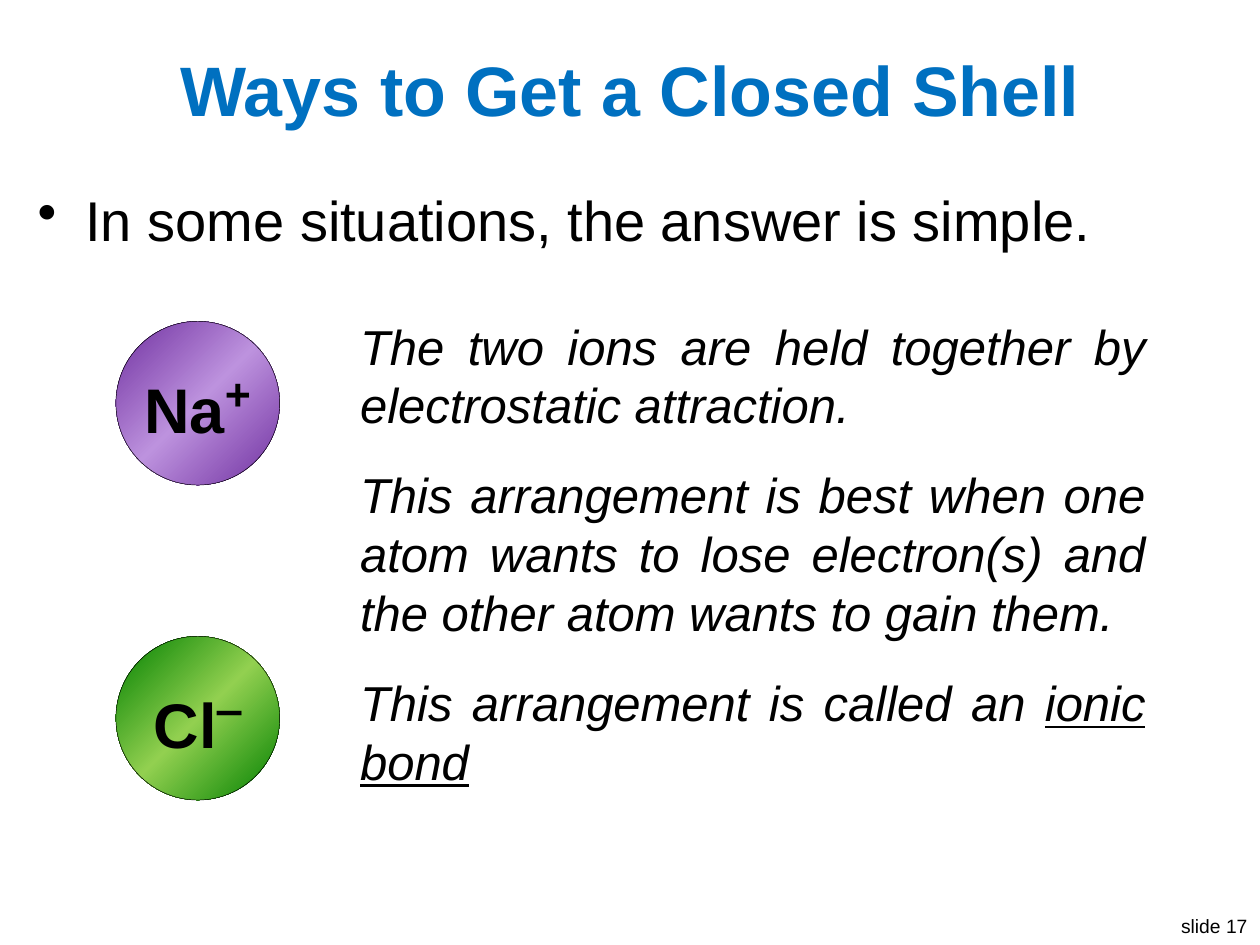
import copy
from dataclasses import dataclass

import pptx
import pptx.dml.color
import pptx.enum.shapes
import pptx.enum.text
import pptx.oxml
import pptx.oxml.ns
import pptx.util

Inches = pptx.util.Inches
Pt = pptx.util.Pt
Align = pptx.enum.text.PP_ALIGN
Anchor = pptx.enum.text.MSO_ANCHOR
qn = pptx.oxml.ns.qn


@dataclass(frozen=True)
class Theme:
    font: str = "Arial"
    ink: str = "000000"
    heading: str = "0070C0"
    sodium: tuple = ("7030A0", "BD92DE")
    chlorine: tuple = ("008000", "92D050")
    title_size: int = 40
    bullet_size: int = 32
    note_size: int = 28
    ion_size: int = 36
    charge_size: int = 44
    footer_size: int = 11


THEME = Theme()


def rgb(value):
    return pptx.dml.color.RGBColor.from_string(value)


def add_run(paragraph, text, size, color=THEME.ink, bold=False, italic=False, underline=False):
    run = paragraph.add_run()
    run.text = text
    font = run.font
    font.name, font.size = THEME.font, Pt(size)
    font.bold, font.italic, font.underline = bold, italic, underline
    font.color.rgb = rgb(color)
    return run


def place(shape, left, top, width, height):
    shape.left, shape.top = Inches(left), Inches(top)
    shape.width, shape.height = Inches(width), Inches(height)


def add_title(slide, text):
    title = slide.shapes.title
    place(title, 0.2, 0.3, 9.6, 0.8)
    title.text_frame.vertical_anchor = Anchor.MIDDLE
    paragraph = title.text_frame.paragraphs[0]
    paragraph.alignment = Align.CENTER
    add_run(paragraph, text, THEME.title_size, THEME.heading, bold=True)


def add_paragraph_box(slide, left, top, width, height, align, space_before=0, wrap=True):
    box = slide.shapes.add_textbox(Inches(left), Inches(top), Inches(width), Inches(height))
    box.text_frame.word_wrap = wrap
    paragraph = box.text_frame.paragraphs[0]
    paragraph.alignment = align
    paragraph.space_before = Pt(space_before)
    return paragraph


def add_bullet(slide, text):
    paragraph = add_paragraph_box(slide, 0.2, 1.42, 9.6, 0.64, Align.LEFT, 12)
    properties = paragraph._p.get_or_add_pPr()
    indent = Inches(0.38)
    properties.set("marL", str(indent))
    properties.set("indent", str(-indent))
    marker = pptx.oxml.parse_xml(
        f'<a:buChar {pptx.oxml.ns.nsdecls("a")} char="•"/>')
    properties.append(marker)
    add_run(paragraph, text, THEME.bullet_size)


def add_note(slide, top, height, text, term=""):
    paragraph = add_paragraph_box(slide, 2.76, top, 6.43, height, Align.JUSTIFY, 12)
    add_run(paragraph, text, THEME.note_size, italic=True)
    if term:
        add_run(paragraph, term, THEME.note_size, italic=True, underline=True)


def fill_sheen(shape, edge, middle):
    shape.fill.gradient()
    shape.fill.gradient_angle = 315
    stops = shape.fill.gradient_stops
    for stop, position in zip(stops, (0, 1)):
        stop.color.rgb = rgb(edge)
        stop.position = position
    stop_list = shape._element.spPr.find(qn("a:gradFill")).find(qn("a:gsLst"))
    stop_list.insert(1, copy.deepcopy(stop_list[0]))
    center = shape.fill.gradient_stops[1]
    center.color.rgb = rgb(middle)
    center.position = 0.5


def add_ion(slide, top, symbol, charge, colors):
    ion = slide.shapes.add_shape(
        pptx.enum.shapes.MSO_SHAPE.OVAL, Inches(0.92), Inches(top), Inches(1.3), Inches(1.3))
    ion.shadow.inherit = False
    fill_sheen(ion, *colors)
    ion.line.color.rgb = rgb(THEME.ink)
    ion.line.width = Pt(0.25)
    frame = ion.text_frame
    frame.margin_left = frame.margin_right = frame.margin_top = frame.margin_bottom = 0
    frame.vertical_anchor = Anchor.MIDDLE
    paragraph = frame.paragraphs[0]
    paragraph.alignment = Align.CENTER
    add_run(paragraph, symbol, THEME.ion_size, bold=True)
    superscript = add_run(paragraph, charge, THEME.charge_size, bold=True)
    superscript.font._element.set("baseline", "30000")


def add_footer(slide, text):
    paragraph = add_paragraph_box(slide, 9.25, 7.21, 0.75, 0.29, Align.RIGHT, wrap=False)
    add_run(paragraph, text, THEME.footer_size)


def main():
    deck = pptx.Presentation()
    deck.slide_width, deck.slide_height = Inches(10), Inches(7.5)
    slide = deck.slides.add_slide(deck.slide_layouts[5])
    add_footer(slide, "slide 17")
    add_title(slide, "Ways to Get a Closed Shell")
    add_bullet(slide, "In some situations, the answer is simple.")
    add_ion(slide, 2.55, "Na", "+", THEME.sodium)
    add_ion(slide, 5.05, "Cl", "‒", THEME.chlorine)
    add_note(slide, 2.46, 1.04, "The two ions are held together by electrostatic attraction.")
    add_note(slide, 3.64, 1.51, "This arrangement is best when one atom wants to lose electron(s) "
                                "and the other atom wants to gain them.")
    add_note(slide, 5.29, 1.04, "This arrangement is called an ", "ionic bond")
    deck.save("out.pptx")


if __name__ == "__main__":
    main()
